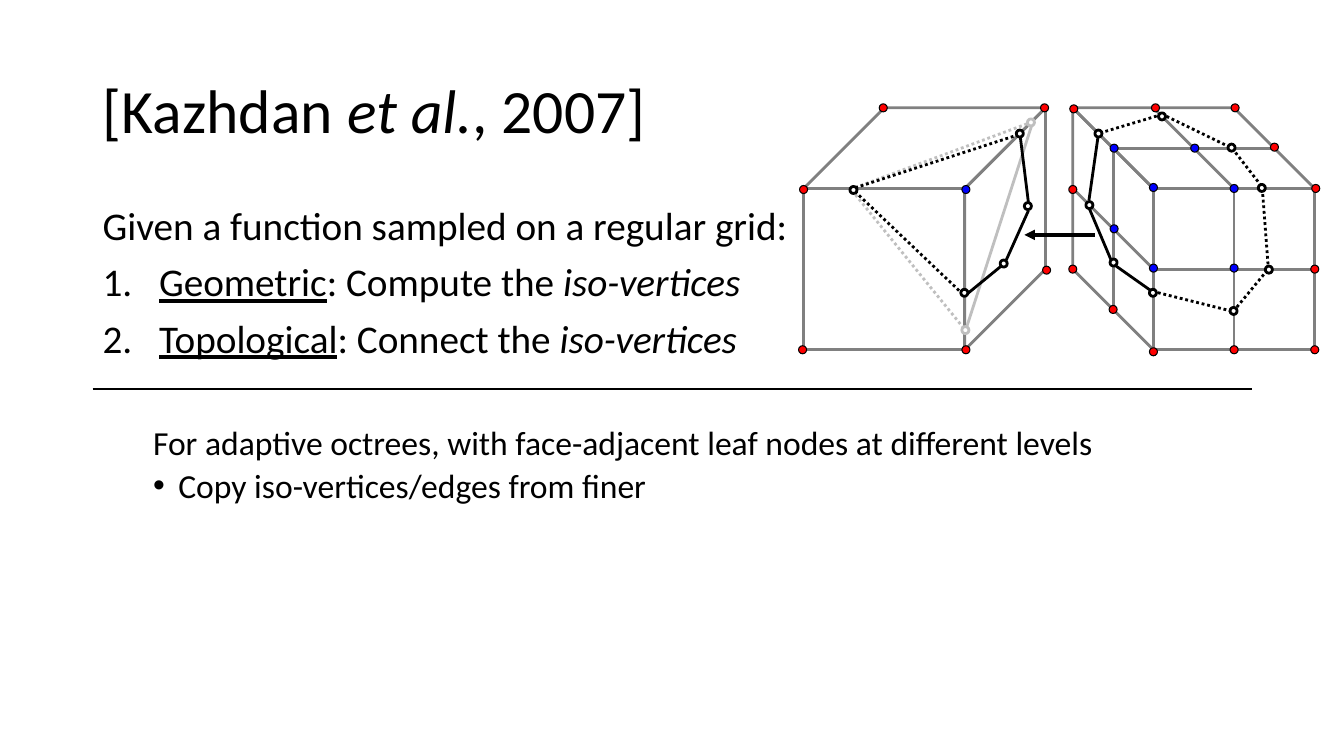
"""Slide on connecting iso-vertices across adaptive octree faces, with two cubes."""
from pptx import Presentation
from pptx.dml.color import RGBColor
from pptx.enum.dml import MSO_LINE
from pptx.enum.shapes import MSO_CONNECTOR, MSO_SHAPE
from pptx.enum.text import MSO_ANCHOR
from pptx.oxml.ns import qn
from pptx.util import Inches, Pt
from lxml import etree

BLACK = RGBColor(0, 0, 0)
WHITE = RGBColor(255, 255, 255)
GRAY = RGBColor(0x80, 0x80, 0x80)
LIGHT = RGBColor(0xBF, 0xBF, 0xBF)
RED = RGBColor(255, 0, 0)
BLUE = RGBColor(0, 0, 255)
RECT, SLANT, OVAL = MSO_SHAPE.RECTANGLE, MSO_SHAPE.PARALLELOGRAM, MSO_SHAPE.OVAL
STRAIGHT, DOTTED = MSO_CONNECTOR.STRAIGHT, MSO_LINE.ROUND_DOT
TOP, LEFT, BOTTOM, RIGHT = range(4)

prs = Presentation()
prs.slide_width, prs.slide_height = Inches(13.33), Inches(7.5)
s = prs.slides.add_slide(prs.slide_layouts[6])


def add_outlined(kind, box, fill, color, width):
    sp = s.shapes.add_shape(kind, *[Inches(v) for v in box])
    sp.shadow.inherit = False
    if fill is None:
        sp.fill.background()
    else:
        sp.fill.solid()
        sp.fill.fore_color.rgb = fill
    sp.line.color.rgb = color
    sp.line.width = Pt(width)
    return sp


def add_edge(points, color, width=2, dash=None):
    edge = s.shapes.add_connector(STRAIGHT, *[Inches(v) for v in points])
    edge.line.color.rgb = color
    edge.line.width = Pt(width)
    if dash is not None:
        edge.line.dash_style = dash
    etree.SubElement(edge._element.spPr, qn("a:effectLst"))
    return edge


title = s.shapes.add_textbox(Inches(0.92), Inches(0.4), Inches(11.5), Inches(1.45))
body = s.shapes.add_textbox(Inches(0.92), Inches(2), Inches(11.5), Inches(5.5))
title.text_frame.vertical_anchor = MSO_ANCHOR.MIDDLE

# text, italic, underline per run; then size, space before, margin, indent, bullet
paragraphs = [
    (title, [("[Kazhdan ", 0, 0), ("et al.", 1, 0), (", 2007]", 0, 0)], 44, 0, 0, 0, None),
    (body, [("Given a function sampled on a regular grid:", 0, 0)], 28, 0, 0, 0, None),
    (body, [("Geometric", 0, 1), (": Compute the ", 0, 0), ("iso-vertices", 1, 0)],
     28, 10, 0.56, -0.56, "number"),
    (body, [("Topological", 0, 1), (": Connect the ", 0, 0), ("iso-vertices", 1, 0)],
     28, 10, 0.56, -0.56, "number"),
    (body, [("For adaptive octrees, with face-adjacent leaf nodes at different levels", 0, 0)],
     24, 46, 0.5, 0, None),
    (body, [("Copy iso-vertices/edges from finer", 0, 0)], 24, 5, 0.75, -0.25, "dot"),
]
for box, runs, size, before, margin, indent, bullet in paragraphs:
    tf = box.text_frame
    tf.word_wrap = True
    p = tf.add_paragraph() if tf.text else tf.paragraphs[0]
    p.line_spacing = 0.9
    p.space_before = Pt(before)
    pPr = p._p.get_or_add_pPr()
    pPr.set("marL", str(Inches(margin)))
    pPr.set("indent", str(Inches(indent)))
    if bullet == "number":
        etree.SubElement(pPr, qn("a:buFont")).set("typeface", "+mj-lt")
        etree.SubElement(pPr, qn("a:buAutoNum")).set("type", "arabicPeriod")
    elif bullet == "dot":
        etree.SubElement(pPr, qn("a:buFont")).set("typeface", "Arial")
        etree.SubElement(pPr, qn("a:buChar")).set("char", "•")
    for text, italic, underline in runs:
        r = p.add_run()
        r.text = text
        r.font.name = "Calibri"
        r.font.size = Pt(size)
        r.font.color.rgb = BLACK
        r.font.italic = bool(italic)
        r.font.underline = bool(underline)

add_edge((0.92, 3.86, 12.42, 3.86), BLACK)

for top_left, side_left, front_left, turn, top_flip, side_flip in [
    (7.97, 8.77, 7.97, 90, False, True),
    (10.64, 9.84, 11.44, 270, True, False),
]:
    for left, top, rotation, flip in [(top_left, 1.07, 0, top_flip),
                                      (side_left, 1.87, turn, side_flip)]:
        face = add_outlined(SLANT, (left, top, 2.4, 0.8), None, GRAY, 2)
        face.adjustments[0] = 1.0
        face.rotation = rotation
        if flip:
            face._element.spPr.find(qn("a:xfrm")).set("flipH", "1")
    front = add_outlined(RECT, (front_left, 1.87, 1.6, 1.6), WHITE, GRAY, 2)

for points, begin, end in [
    ((11.04, 1.47, 11.04, 3.07), None, None),
    ((11.04, 1.47, 12.64, 1.47), None, None),
    ((10.64, 1.87, 11.44, 2.67), None, LEFT),
    ((11.44, 1.07, 12.24, 1.87), None, TOP),
    ((12.24, 1.87, 12.24, 3.47), TOP, BOTTOM),
    ((13.04, 2.67, 11.44, 2.67), RIGHT, LEFT),
]:
    edge = add_edge(points, GRAY)
    if begin is not None:
        edge.begin_connect(front, begin)
    if end is not None:
        edge.end_connect(front, end)

iso_edges = [
    (LIGHT, DOTTED, [(8.43, 1.88, 10.21, 1.22), (8.45, 1.89, 9.57, 3.27)]),
    (LIGHT, None, [(10.25, 1.19, 9.57, 3.3)]),
    (BLACK, DOTTED, [
        (8.48, 1.9, 9.52, 2.89), (8.43, 1.88, 10.09, 1.34), (11.43, 2.89, 12.23, 3.09),
        (10.91, 1.32, 11.51, 1.14), (11.52, 1.13, 12.22, 1.47), (12.22, 1.47, 12.53, 1.87),
        (12.52, 1.87, 12.58, 2.67), (12.57, 2.68, 12.24, 3.08)]),
    (BLACK, None, [
        (10.2, 2.09, 9.98, 2.58), (9.93, 2.64, 9.6, 2.91), (10.12, 1.36, 10.2, 2.01),
        (11.07, 2.64, 11.41, 2.88), (10.8, 2.06, 11.02, 2.58), (10.89, 1.36, 10.8, 1.99)]),
]
for color, dash, segments in iso_edges:
    for points in segments:
        add_edge(points, color, dash=dash)

vertices = [
    (0.07, WHITE, LIGHT, 2, [(9.54, 3.24), (10.19, 1.18)]),
    (0.07, WHITE, BLACK, 2, [
        (10.16, 2.01), (9.92, 2.58), (10.08, 1.29), (9.53, 2.87), (8.43, 1.85),
        (11.01, 2.57), (10.77, 2), (11.4, 2.87), (12.2, 3.05), (12.55, 2.64),
        (12.48, 1.83), (12.18, 1.43), (11.49, 1.12), (10.86, 1.29)]),
    (0.08, RED, BLACK, 0.75, [
        (7.92, 3.43), (7.93, 1.84), (8.72, 1.03), (9.54, 3.43), (10.34, 2.64), (10.32, 1.03),
        (10.61, 1.04), (10.6, 1.84), (10.6, 2.63), (11, 3.03), (11.4, 3.45), (11.42, 1.03),
        (12.21, 1.03), (12.6, 1.42), (13.01, 1.83), (13, 2.63), (13, 3.43), (12.2, 3.43)]),
    (0.08, BLUE, BLACK, 0.75, [
        (9.54, 1.84), (11.4, 1.82), (11.4, 2.62), (11.01, 1.43), (11.81, 1.43),
        (12.2, 1.83), (12.2, 2.62), (11.01, 2.23)]),
]
for size, fill, color, width, corners in vertices:
    for left, top in corners:
        add_outlined(OVAL, (left, top, size, size), fill, color, width)

arrow = add_edge((10.86, 2.33, 10.16, 2.33), BLACK, 2.5)
etree.SubElement(arrow.line._get_or_add_ln(), qn("a:tailEnd")).set("type", "triangle")

prs.save("out.pptx")
